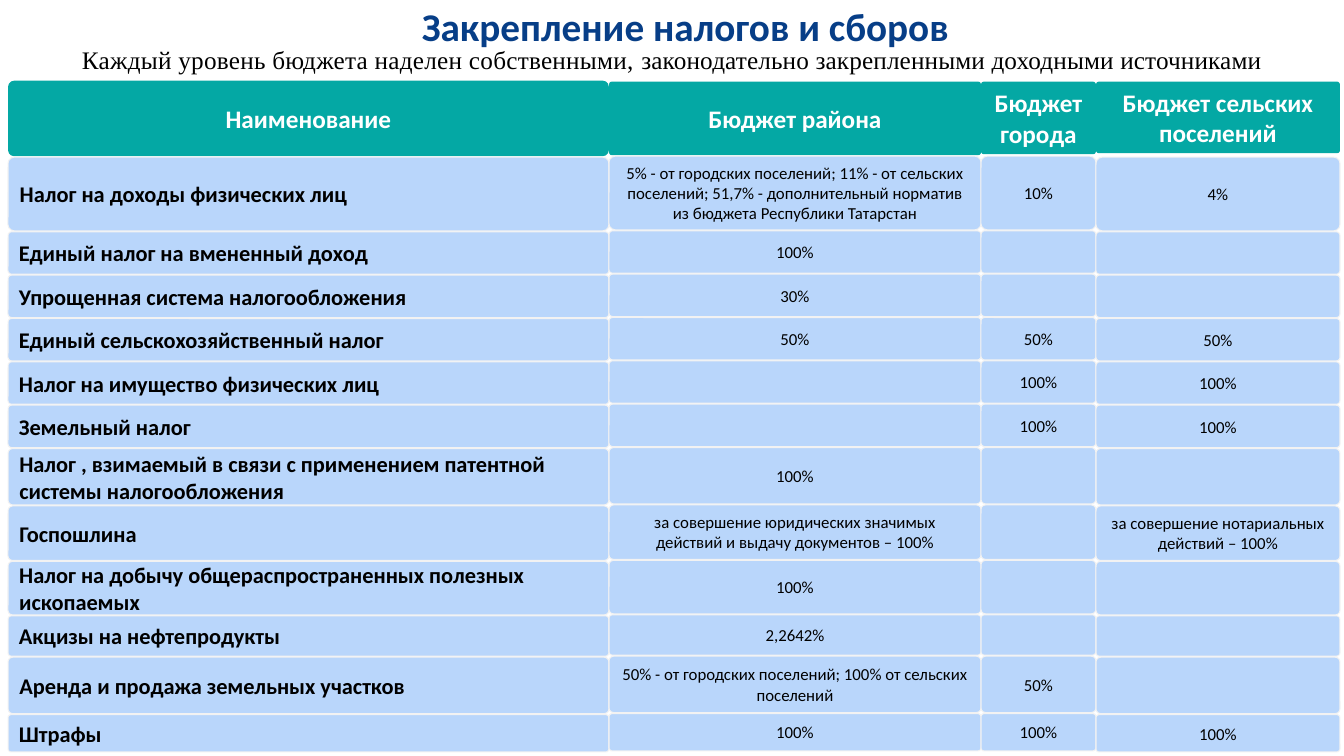
from itertools import accumulate

from pptx import Presentation
from pptx.dml.color import RGBColor as RGB
from pptx.enum.shapes import MSO_SHAPE as SHAPE
from pptx.enum.text import MSO_ANCHOR as ANCHOR, PP_ALIGN as ALIGN
from pptx.util import Inches, Pt

NAVY = RGB(0x07, 0x3E, 0x87)
TEAL = RGB(0x04, 0xA8, 0xA4)
SKY = RGB(0xB9, 0xD6, 0xFB)
EDGE = RGB(0xF2, 0xF2, 0xF2)
BLACK = RGB(0, 0, 0)
WHITE = RGB(0xFF, 0xFF, 0xFF)

COLS = [5.96, 3.69, 1.14, 2.42]
LIFTS = [0, 0.01, 0.01, 0]
GAP = 0.01

HEADS = [
    ("Наименование", 0, 0.75, 0.083),
    ("Бюджет района", 0.01, 0.73, 0.04),
    ("Бюджет города", 0.01, 0.72, 0.04),
    ("Бюджет сельских поселений", 0.01, 0.71, 0.04),
]

ROWS = [
    (0.74, "Налог на доходы физических лиц",
     "5% - от городских поселений; 11% - от сельских поселений; "
     "51,7% - дополнительный норматив из бюджета Республики Татарстан", "10%", "4%"),
    (0.43, "Единый налог на вмененный доход", "100%", "", ""),
    (0.43, "Упрощенная система налогообложения", "30%", "", ""),
    (0.43, "Единый сельскохозяйственный налог", "50%", "50%", "50%"),
    (0.43, "Налог на имущество физических лиц", "", "100%", "100%"),
    (0.43, "Земельный налог", "", "100%", "100%"),
    (0.57, "Налог , взимаемый в связи с применением патентной системы налогообложения",
     "100%", "", ""),
    (0.55, "Госпошлина",
     "за совершение юридических значимых действий и выдачу документов – 100%", "",
     "за совершение нотариальных действий – 100%"),
    (0.54, "Налог на добычу общераспространенных полезных ископаемых", "100%", "", ""),
    (0.41, "Акцизы на нефтепродукты", "2,2642%", "", ""),
    (0.57, "Аренда и продажа земельных участков",
     "50% - от городских поселений; 100% от сельских поселений", "50%", ""),
    (0.38, "Штрафы", "100%", "100%", "100%"),
]


def starts(first, sizes):
    return list(accumulate(sizes, initial=first))[:-1]


def write(para, text, size, color, bold=False, font="Calibri"):
    run = para.add_run()
    run.text = text
    run.font.name = font
    run.font.size = Pt(size)
    run.font.bold = bold
    run.font.color.rgb = color
    return run


def label(slide, box, wrap):
    frame = slide.shapes.add_textbox(*map(Inches, box)).text_frame
    frame.word_wrap = wrap
    para = frame.paragraphs[0]
    para.alignment = ALIGN.CENTER
    return para


def tile(slide, box, fill, round_by, text, size, color, bold, align):
    shape = slide.shapes.add_shape(SHAPE.ROUNDED_RECTANGLE, *map(Inches, box))
    shape.adjustments[0] = round_by
    shape.shadow.inherit = False
    shape.fill.solid()
    shape.fill.fore_color.rgb = fill
    if fill == TEAL:
        shape.line.fill.background()
    else:
        shape.line.color.rgb = EDGE
        shape.line.width = Pt(0.75)
    if text:
        frame = shape.text_frame
        frame.word_wrap = True
        frame.vertical_anchor = ANCHOR.MIDDLE
        para = frame.paragraphs[0]
        para.alignment = align
        para.space_after = Pt(10)
        write(para, text, size, color, bold)


def titles(slide, left, top, width):
    para = label(slide, (left + 3.76, top, 5.49, 0.57), False)
    write(para, "Закрепление налогов и сборов", 28, NAVY, True)
    para = label(slide, (left, top + 0.42, width, 0.4), True)
    for text, space in (
        ("Каждый уровень бюджета наделен собственными, ", "20"),
        ("законодательно закрепленными доходными источниками", "10"),
    ):
        run = write(para, text, 18, BLACK, font="Times New Roman")
        run.font._element.set("spc", space)


def header(slide, left, top):
    for x, width, (text, drop, height, arc) in zip(starts(left, COLS), COLS, HEADS):
        tile(slide, (x, top + drop, width, height), TEAL, arc,
             text, 18, WHITE, True, ALIGN.CENTER)


def body(slide, left, top):
    pitches = [row[0] for row in ROWS]
    for y, (pitch, *texts) in zip(starts(top, pitches), ROWS):
        for col, (x, text) in enumerate(zip(starts(left, COLS), texts)):
            size, bold, align = (12, False, ALIGN.CENTER) if col else (16, True, ALIGN.LEFT)
            box = (x, y - LIFTS[col], COLS[col], pitch - GAP)
            tile(slide, box, SKY, 0.083, text, size, BLACK, bold, align)


def main():
    deck = Presentation()
    deck.slide_width = Inches(13.33)
    deck.slide_height = Inches(7.5)
    slide = deck.slides.add_slide(deck.slide_layouts[6])
    titles(slide, 0.29, -0.03, 12.75)
    header(slide, 0.08, 0.8)
    body(slide, 0.08, 1.56)
    deck.save("out.pptx")


if __name__ == "__main__":
    main()
